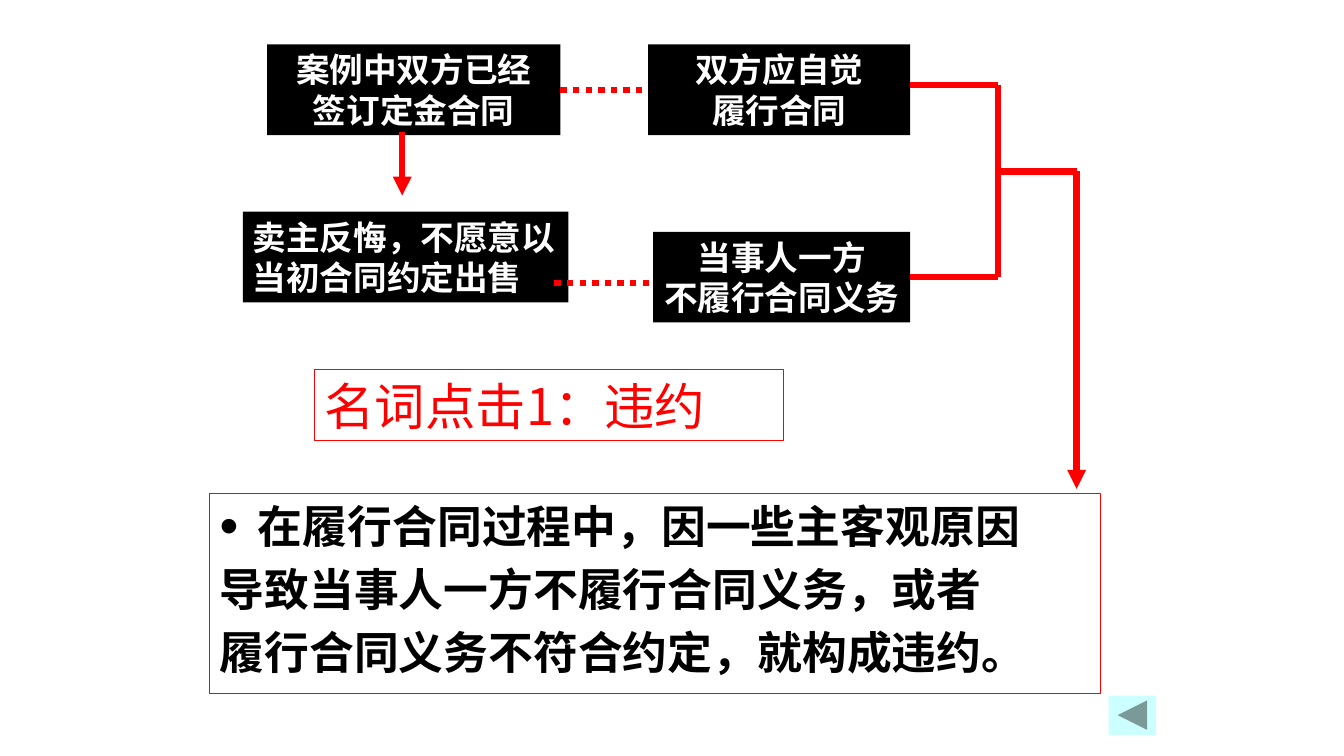
import lxml.etree
import pptx
import pptx.util
import pptx.dml.color
import pptx.enum.dml
import pptx.enum.shapes
import pptx.enum.text
import pptx.oxml.ns

Pt = pptx.util.Pt
SHAPES = pptx.enum.shapes.MSO_SHAPE
ALIGN = pptx.enum.text.PP_ALIGN

RED, BLACK, WHITE, CYAN = "FF0000", "000000", "FFFFFF", "CCFFFF"
TERM = "名词点击1：违约"
DEFINITION = [
    "在履行合同过程中，因一些主客观原因",
    "导致当事人一方不履行合同义务，或者",
    "履行合同义务不符合约定，就构成违约。",
]
BOX_HEIGHT = 64.8
BOXES = {
    "signed": (190.8, 31.7, 209.5, ALIGN.CENTER, ["案例中双方已经", "签订定金合同"]),
    "regret": (173.5, 151.2, 232.6, ALIGN.LEFT, ["卖主反悔，不愿意以当初合同约定出售"]),
    "perform": (463, 31.7, 187.2, ALIGN.CENTER, ["双方应自觉", "履行合同"]),
    "breach": (466.6, 165.6, 183.6, ALIGN.CENTER, ["当事人一方", "不履行合同义务"]),
}
BOX_RIGHT = 650.2
PERFORM_Y, MIDDLE_Y, BREACH_Y = 60.5, 122.4, 198
BRACKET_X, ARROW_X = 712.8, 769
LINES = [
    ((287.3, 94.3), (287.3, 139.7), "arrow"),
    ((396, 202.3), (463.7, 202.3), "dots"),
    ((BOX_RIGHT, PERFORM_Y), (BRACKET_X, PERFORM_Y), None),
    ((BRACKET_X, PERFORM_Y), (BRACKET_X, BREACH_Y), None),
    ((BRACKET_X, MIDDLE_Y), (ARROW_X, MIDDLE_Y), None),
    ((ARROW_X, MIDDLE_Y), (ARROW_X, 349.2), "arrow"),
]


def color(value):
    return pptx.dml.color.RGBColor.from_string(value)


def add_xml(parent, tag, **attributes):
    lxml.etree.SubElement(parent, pptx.oxml.ns.qn(tag), attributes)


def write(shape, lines, size, font, ink, bold=False, align=ALIGN.LEFT, before=0):
    frame = shape.text_frame
    frame.word_wrap = True
    frame.auto_size = pptx.enum.text.MSO_AUTO_SIZE.NONE
    frame.vertical_anchor = pptx.enum.text.MSO_ANCHOR.TOP
    for index, line in enumerate(lines):
        paragraph = frame.add_paragraph() if index else frame.paragraphs[0]
        paragraph.alignment = align
        paragraph.space_before = Pt(before)
        run = paragraph.add_run()
        run.text = line
        run.font.name = font
        run.font.size = Pt(size)
        run.font.bold = bold
        run.font.color.rgb = color(ink)
    return frame.paragraphs


def outline(shape, ink):
    shape.line.color.rgb = color(ink)
    shape.line.width = Pt(0.75)


def add_box(slide, kind, left, top, width, height, fill):
    shape = slide.shapes.add_shape(kind, Pt(left), Pt(top), Pt(width), Pt(height))
    shape.shadow.inherit = False
    shape.fill.solid()
    shape.fill.fore_color.rgb = color(fill)
    shape.line.fill.background()
    return shape


def add_line(slide, start, end, style):
    connector = slide.shapes.add_connector(
        pptx.enum.shapes.MSO_CONNECTOR.STRAIGHT, *map(Pt, start + end))
    connector.line.color.rgb = color(RED)
    connector.line.width = Pt(4.5)
    if style == "dots":
        connector.line.dash_style = pptx.enum.dml.MSO_LINE.ROUND_DOT
    if style == "arrow":
        line_element = connector._element.spPr.find(pptx.oxml.ns.qn("a:ln"))
        add_xml(line_element, "a:tailEnd", type="triangle")
    add_xml(connector._element.spPr, "a:effectLst")
    return connector


def add_definition(slide):
    panel = add_box(slide, SHAPES.RECTANGLE, 149.8, 352.8, 636.5, 142.6, WHITE)
    outline(panel, RED)
    paragraphs = write(panel, DEFINITION, 32, "Arial", BLACK, bold=True, before=6.4)
    for index, paragraph in enumerate(paragraphs):
        properties = paragraph._p.get_or_add_pPr()
        properties.set("marL", str(int(Pt(27.4))))
        properties.set("indent", str(-int(Pt(27.4))))
        if index == 0:
            add_xml(properties, "a:buSzPct", val="120000")
            add_xml(properties, "a:buFont", typeface="Arial")
            add_xml(properties, "a:buChar", char="•")
        else:
            add_xml(properties, "a:buNone")


def add_term(slide):
    title = slide.shapes.title
    title.left, title.top, title.width, title.height = map(Pt, (224.6, 264.2, 334.8, 50.4))
    outline(title, RED)
    font = "Noto Sans CJK SC"
    paragraph = write(title, [TERM], 36, font, RED)[0]
    latin = paragraph.runs[0]._r.get_or_add_rPr()
    add_xml(latin, "a:ea", typeface=font)


def main():
    presentation = pptx.Presentation()
    presentation.slide_width, presentation.slide_height = Pt(960), Pt(540)
    slide = presentation.slides.add_slide(presentation.slide_layouts[5])
    add_term(slide)
    add_definition(slide)
    boxes = {}
    for name, (left, top, width, align, lines) in BOXES.items():
        boxes[name] = add_box(slide, SHAPES.RECTANGLE, left, top, width, BOX_HEIGHT, BLACK)
        write(boxes[name], lines, 24, "Calibri", WHITE, bold=True, align=align)
    for start, end, style in LINES:
        add_line(slide, start, end, style)
    duty_link = add_line(slide, (400.3, 64.1), (463, 64.1), "dots")
    duty_link.begin_connect(boxes["signed"], 3)
    duty_link.end_connect(boxes["perform"], 1)
    breach_link = add_line(slide, (BOX_RIGHT, BREACH_Y), (BRACKET_X, BREACH_Y), None)
    breach_link.begin_connect(boxes["breach"], 3)
    add_box(slide, SHAPES.ACTION_BUTTON_BACK_OR_PREVIOUS, 792, 496.8, 33.8, 28.1, CYAN)
    presentation.save("out.pptx")


if __name__ == "__main__":
    main()
